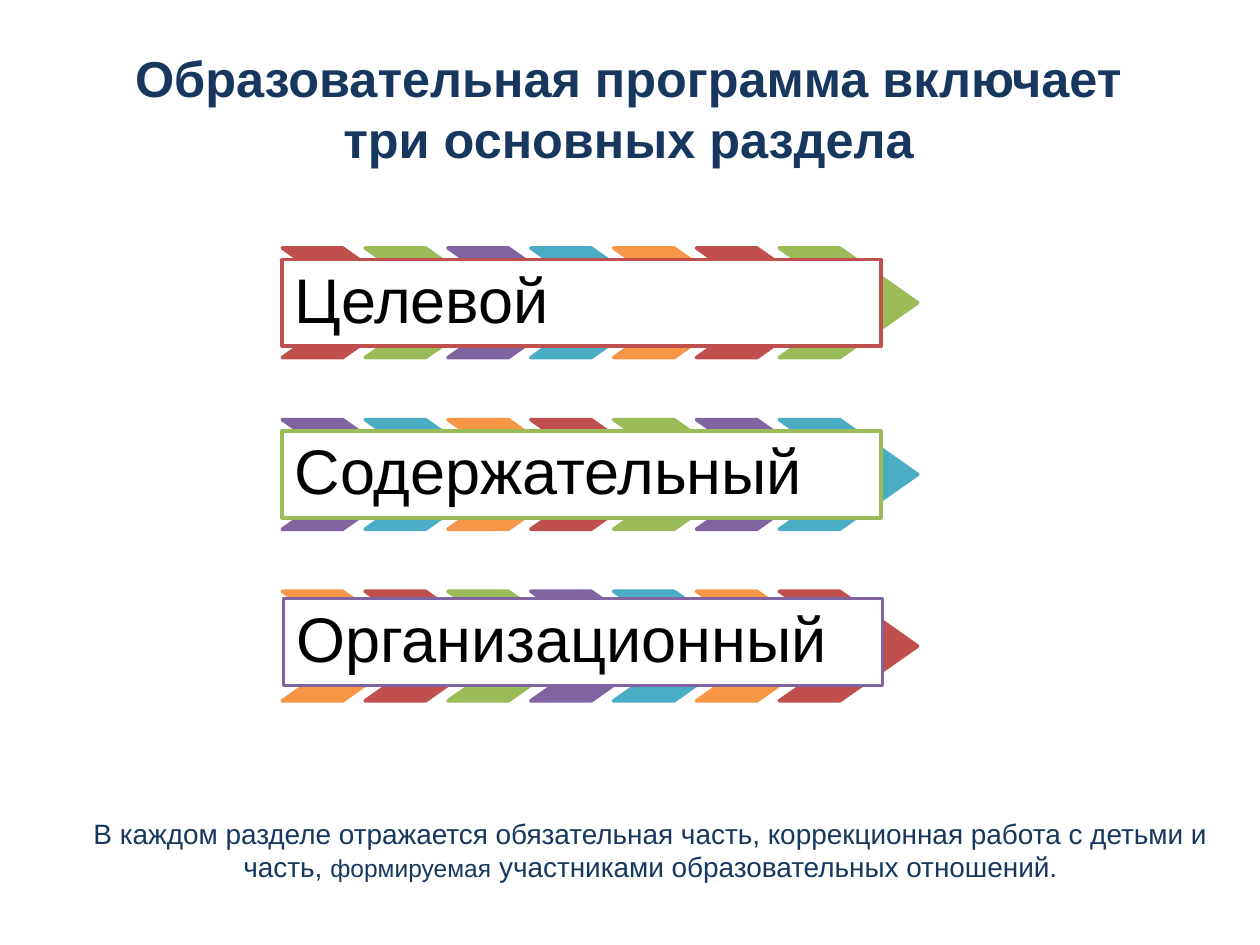
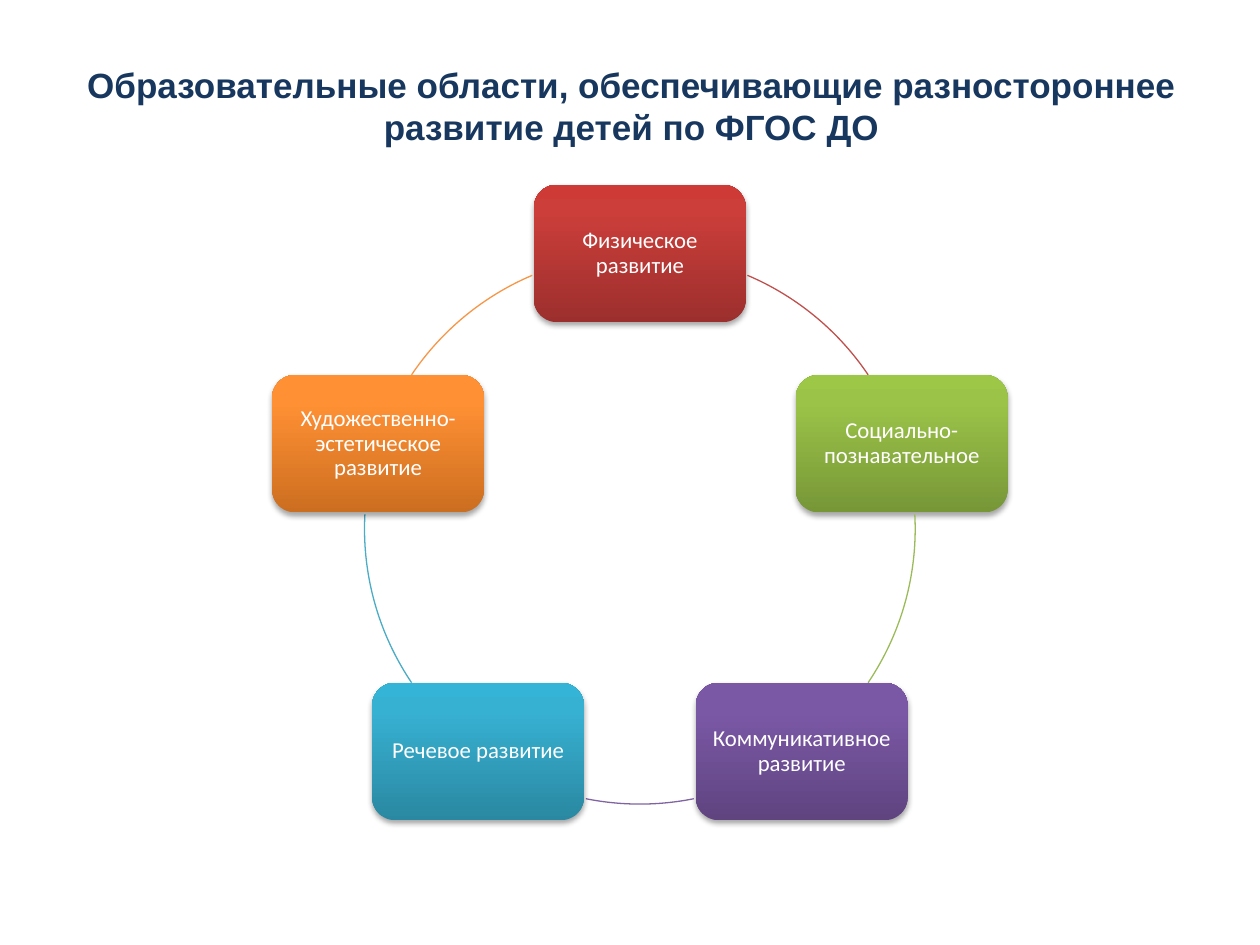
from copy import deepcopy
from dataclasses import dataclass
from math import cos, radians, sin

from lxml import etree
from pptx import Presentation
from pptx import util as u
from pptx.dml.color import RGBColor
from pptx.enum import shapes, text
from pptx.oxml.ns import qn

# Shared look
NAVY, WHITE, BLACK = "17375E", "FFFFFF", "000000"
RED, GREEN, PURPLE, BLUE, ORANGE = "C0504D", "9BBB59", "8064A2", "4BACC6", "F79646"
ACCENTS = [RED, GREEN, PURPLE, BLUE, ORANGE]
HEADING_FONT, BOX_FONT = "Arial", "Calibri"


@dataclass(frozen=True)
class Area:
    """Position and size in centimetres."""
    left: float
    top: float
    width: float
    height: float

    def lengths(self) -> list:
        return [u.Cm(n) for n in (self.left, self.top, self.width, self.height)]


@dataclass(frozen=True)
class Section:
    label: str
    label_left: float
    label_top: float


@dataclass(frozen=True)
class Field:
    label: str
    gradient: tuple  # bottom, upper and top colour
    arc_start: float  # degrees, clockwise from the right
    arc_end: float


# Slide 1: rows of chevrons
SECTIONS = [
    Section("Целевой", 5.69, 5.23),
    Section("Содержательный", 5.69, 8.69),
    Section("Организационный", 5.72, 12.07),
]
CHEVRON = Area(5.69, 5.0, 2.79, 2.21)
CHEVRONS_PER_ROW = 7
CHEVRON_STEP, ROW_STEP = 1.67, 3.46
NOTE_PARTS = [
    ("В каждом разделе отражается обязательная часть, "
     "коррекционная работа с детьми и часть, ", 16),
    ("формируемая", 14),
    (" участниками образовательных отношений.", 16),
]

# Slide 2: ring of fields
FIELDS = [
    Field("Физическое развитие", ("9C2F2D", "CB3E3A", "CE3B37"), 293, 326),
    Field("Социально-познавательное", ("779737", "9BC348", "9DC746"), 357, 34),
    Field("Коммуникативное развитие", ("5F4480", "7B58A6", "7C57A8"), 78.7, 101.3),
    Field("Речевое развитие", ("2A88A2", "37B1D2", "34B4D6"), 146, 183),
    Field("Художественно- эстетическое развитие", ("CC6E20", "FF9034", "FF9136"), 214, 247),
]
RING_X, RING_Y, RING_RADIUS = 12.9, 10.66, 5.55
BOX_WIDTH, BOX_HEIGHT = 4.27, 2.77


def color(value: str) -> RGBColor:
    return RGBColor.from_string(value)


def style_span(span, size: float, value: str, font: str, bold: bool = False) -> None:
    span.font.name, span.font.size, span.font.bold = font, u.Pt(size), bold
    span.font.color.rgb = color(value)


def add_page(deck, title: str, area: Area, size: float):
    """Add a title-only page with its heading in place."""
    page = deck.slides.add_slide(deck.slide_layouts[5])
    box = page.shapes.title
    box.left, box.top, box.width, box.height = area.lengths()
    frame = box.text_frame
    frame.text = title
    frame.auto_size = text.MSO_AUTO_SIZE.NONE
    frame.vertical_anchor = text.MSO_ANCHOR.MIDDLE
    para = frame.paragraphs[0]
    para.alignment = text.PP_ALIGN.CENTER
    style_span(para.runs[0], size, NAVY, HEADING_FONT, bold=True)
    return page


def add_figure(page, kind, area: Area, fill: str = "", line: str = "", width: float = 2):
    """Add a preset shape without shadow; an empty colour means none."""
    shape = page.shapes.add_shape(kind, *area.lengths())
    shape.shadow.inherit = False
    if fill:
        shape.fill.solid()
        shape.fill.fore_color.rgb = color(fill)
    else:
        shape.fill.background()
    if line:
        shape.line.color.rgb = color(line)
        shape.line.width = u.Pt(width)
    else:
        shape.line.fill.background()
    return shape


def label_figure(shape, label: str, size: float, value: str, font: str,
                 alignment, inset: float) -> None:
    frame = shape.text_frame
    frame.text = label
    frame.word_wrap = True
    frame.vertical_anchor = text.MSO_ANCHOR.MIDDLE
    frame.margin_left = frame.margin_right = u.Cm(inset)
    frame.margin_top = frame.margin_bottom = u.Cm(inset)
    para = frame.paragraphs[0]
    para.alignment, para.line_spacing = alignment, 0.9
    style_span(para.runs[0], size, value, font)


def shade_figure(shape, gradient: tuple) -> None:
    """Fill from bottom to top with three stops and add a soft shadow."""
    shape.fill.gradient()
    shape.fill.gradient_angle = 90
    properties = shape._element.spPr
    stop_list = properties.find(".//" + qn("a:gsLst"))
    stop_list.append(deepcopy(stop_list[-1]))
    for stop, position, value in zip(shape.fill.gradient_stops, (0, 0.8, 1), gradient):
        stop.position = position
        stop.color.rgb = color(value)
    effects = properties.find(qn("a:effectLst"))
    shadow = etree.SubElement(effects, qn("a:outerShdw"), blurRad="40000",
                              dist="23000", dir="5400000", rotWithShape="0")
    tint = etree.SubElement(shadow, qn("a:srgbClr"), val=BLACK)
    etree.SubElement(tint, qn("a:alpha"), val="35000")


def build_sections_page(deck) -> None:
    page = add_page(deck, "Образовательная программа включает три основных раздела",
                    Area(2.31, 0.74, 20.73, 2.87), 28.8)

    # Note under the rows
    box = page.shapes.add_textbox(*Area(1.42, 16.33, 23.39, 1.63).lengths())
    box.text_frame.word_wrap = True
    para = box.text_frame.paragraphs[0]
    para.alignment = text.PP_ALIGN.CENTER
    for words, size in NOTE_PARTS:
        span = para.add_run()
        span.text = words
        style_span(span, size, NAVY, HEADING_FONT)

    # Chevron colours run on from row to row
    for row, section in enumerate(SECTIONS):
        for column in range(CHEVRONS_PER_ROW):
            accent = ACCENTS[(row * CHEVRONS_PER_ROW + column) % len(ACCENTS)]
            area = Area(CHEVRON.left + column * CHEVRON_STEP,
                        CHEVRON.top + row * ROW_STEP, CHEVRON.width, CHEVRON.height)
            chevron = add_figure(page, shapes.MSO_SHAPE.CHEVRON, area, accent, accent)
            chevron.adjustments[0] = 0.71
        plate = add_figure(page, shapes.MSO_SHAPE.RECTANGLE,
                           Area(section.label_left, section.label_top, 12.07, 1.75),
                           WHITE, ACCENTS[row])
        label_figure(plate, section.label, 36, BLACK, HEADING_FONT,
                     text.PP_ALIGN.LEFT, 0.25)


def build_fields_page(deck) -> None:
    page = add_page(deck, "Образовательные области, обеспечивающие разностороннее "
                    "развитие детей по ФГОС ДО", Area(1.3, 0.53, 22.86, 3.2), 20)
    ring = Area(RING_X - RING_RADIUS, RING_Y - RING_RADIUS,
                2 * RING_RADIUS, 2 * RING_RADIUS)
    for index, (field, accent) in enumerate(zip(FIELDS, ACCENTS)):
        # Box on the ring, the first one at the top
        angle = radians(360 / len(FIELDS) * index - 90)
        area = Area(RING_X + RING_RADIUS * cos(angle) - BOX_WIDTH / 2,
                    RING_Y + RING_RADIUS * sin(angle) - BOX_HEIGHT / 2,
                    BOX_WIDTH, BOX_HEIGHT)
        box = add_figure(page, shapes.MSO_SHAPE.ROUNDED_RECTANGLE, area)
        shade_figure(box, field.gradient)
        label_figure(box, field.label, 13, WHITE, BOX_FONT, text.PP_ALIGN.CENTER, 0.13)

        # Arc to the next box; adjustments count 0.6 per degree
        arc = add_figure(page, shapes.MSO_SHAPE.ARC, ring, line=accent, width=0.75)
        arc.adjustments[0] = field.arc_start * 0.6
        arc.adjustments[1] = field.arc_end * 0.6


def main() -> None:
    deck = Presentation()
    deck.slide_width, deck.slide_height = u.Cm(25.4), u.Cm(19.05)
    build_sections_page(deck)
    build_fields_page(deck)
    deck.save("out.pptx")


if __name__ == "__main__":
    main()
